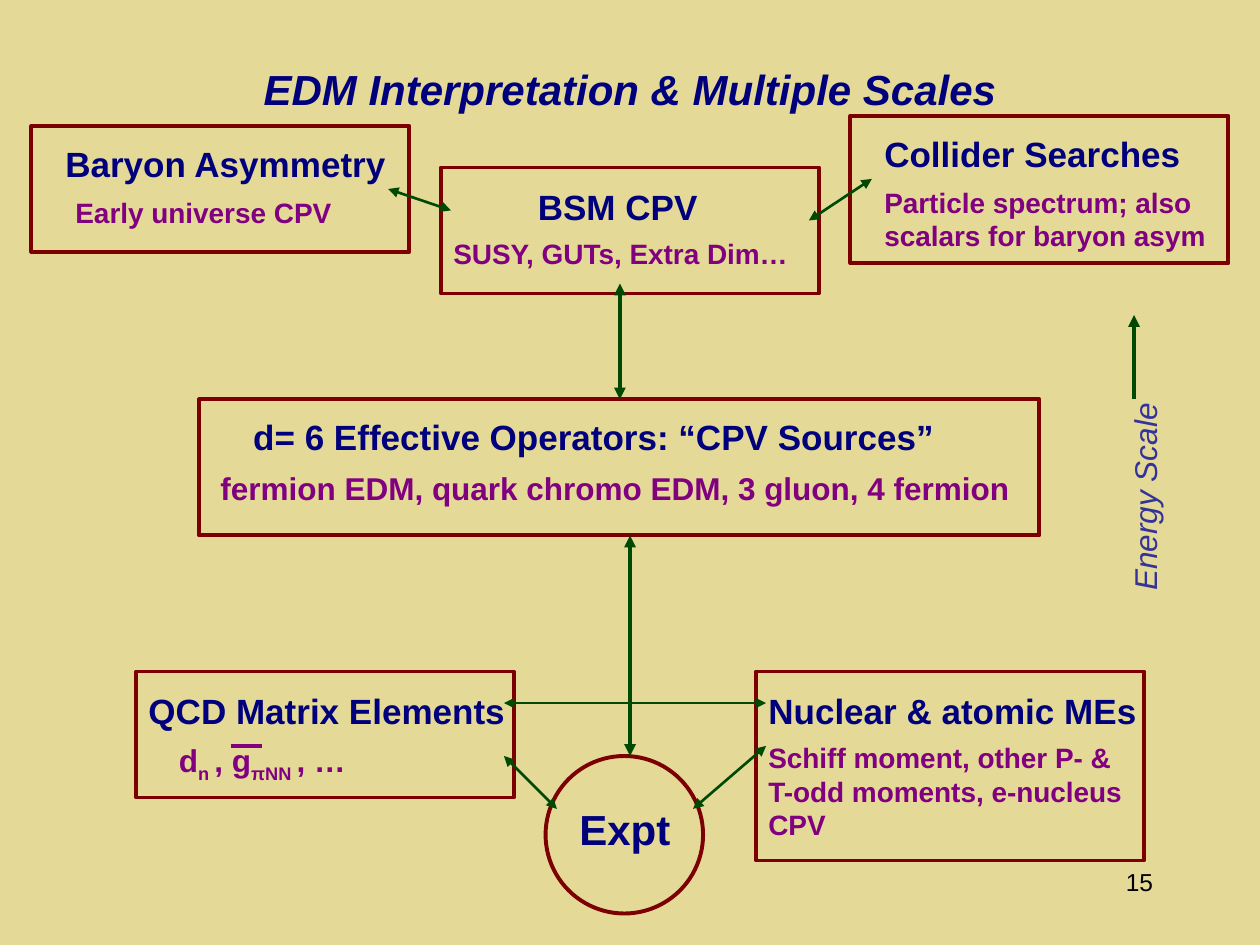
from dataclasses import dataclass

from lxml import etree
from pptx import Presentation
from pptx.dml.color import RGBColor
from pptx.enum import shapes, text
from pptx.oxml import ns
from pptx.util import Inches, Pt


@dataclass(frozen=True)
class Theme:
    font: str = "Arial"
    sand: str = "E4D997"
    navy: str = "00007C"
    purple: str = "800080"
    maroon: str = "7D0000"
    green: str = "004900"
    indigo: str = "333399"
    black: str = "000000"
    title: int = 24
    heading: int = 20
    operator: int = 18
    detail: int = 16
    number: int = 14
    thick: float = 2.25
    thin: float = 1.5


theme = Theme()
deck = Presentation()
deck.slide_width, deck.slide_height = Inches(10), Inches(7.5)
page = deck.slides.add_slide(deck.slide_layouts[6])
page.background.fill.solid()
page.background.fill.fore_color.rgb = RGBColor.from_string(theme.sand)


def add_text(words, at, size, color, bold=True, italic=False, indent=0,
             align=text.PP_ALIGN.LEFT, anchor=text.MSO_ANCHOR.TOP, rotation=0):
    """Add a text box; words is a string or a list of (string, baseline) pairs."""
    box = page.shapes.add_textbox(*map(Inches, at))
    box.rotation = rotation
    frame = box.text_frame
    frame.word_wrap = True
    frame.vertical_anchor = anchor
    frame.margin_left = Inches(0.1 + indent)
    para = frame.paragraphs[0]
    para.alignment = align
    for part, baseline in [(words, 0)] if isinstance(words, str) else words:
        span = para.add_run()
        span.text = part
        span.font.name, span.font.size = theme.font, Pt(size)
        span.font.bold, span.font.italic = bold, italic
        span.font.color.rgb = RGBColor.from_string(color)
        if baseline:
            span._r.get_or_add_rPr().set("baseline", str(baseline * 1000))


def add_line(start, end, width, color=theme.green, heads=()):
    """Add a straight line with arrowheads at the named ends."""
    line = page.shapes.add_connector(
        shapes.MSO_CONNECTOR.STRAIGHT, *map(Inches, (*start, *end)))
    line.line.width = Pt(width)
    line.line.color.rgb = RGBColor.from_string(color)
    outline = line.line._get_or_add_ln()
    for head in heads:
        etree.SubElement(outline, ns.qn(f"a:{head}"), type="triangle")
    etree.SubElement(line._element.spPr, ns.qn("a:effectLst"))


# Title and page number
add_text("EDM Interpretation & Multiple Scales", (0.75, 0.33, 8.5, 0.75),
         theme.title, theme.navy, italic=True,
         align=text.PP_ALIGN.CENTER, anchor=text.MSO_ANCHOR.MIDDLE)
add_text("15", (7.17, 6.83, 2.08, 0.5), theme.number, theme.black, bold=False,
         align=text.PP_ALIGN.RIGHT)

# Frames of the physics topics and the experiment
rectangle, oval = shapes.MSO_SHAPE.RECTANGLE, shapes.MSO_SHAPE.OVAL
for kind, at in [
    (rectangle, (0.25, 1, 3, 1)),
    (rectangle, (3.5, 1.33, 3, 1)),
    (rectangle, (6.75, 0.92, 3, 1.17)),
    (rectangle, (1.58, 3.17, 6.67, 1.08)),
    (rectangle, (1.08, 5.33, 3, 1)),
    (rectangle, (6, 5.33, 3.08, 1.5)),
    (oval, (4.33, 6, 1.25, 1.25)),
]:
    frame_shape = page.shapes.add_shape(kind, *map(Inches, at))
    frame_shape.shadow.inherit = False
    frame_shape.fill.background()
    frame_shape.line.color.rgb = RGBColor.from_string(theme.maroon)
    frame_shape.line.width = Pt(theme.thick)

# Headings
for words, at, indent in [
    ("Baryon Asymmetry", (0.42, 1.08, 2.75, 0.43), 0),
    ("BSM CPV", (4.17, 1.42, 1.67, 0.43), 0),
    ("Collider Searches", (6.92, 1, 2.67, 0.43), 0),
    ("d= 6 Effective Operators: “CPV Sources”", (1.83, 3.25, 6.08, 0.43), 0.08),
    ("QCD Matrix Elements", (1.08, 5.42, 3.25, 0.43), 0),
    ("Nuclear & atomic MEs", (6, 5.42, 3.17, 0.43), 0),
]:
    add_text(words, at, theme.heading, theme.navy, indent=indent)
add_text("Expt", (4.5, 6.33, 1.08, 0.5), theme.title, theme.navy)

# Details under the headings
for words, at in [
    ("Early universe CPV", (0.5, 1.5, 2.42, 0.37)),
    ("SUSY, GUTs, Extra Dim…", (3.5, 1.83, 3, 0.37)),
    ("Particle spectrum; also scalars for baryon asym", (6.92, 1.42, 2.83, 0.64)),
    ("Schiff moment, other P- & T-odd moments, e-nucleus CPV",
     (6, 5.83, 3.17, 0.9)),
]:
    add_text(words, at, theme.detail, theme.purple)

# Operators and couplings, with a bar over the g
couplings = [("d", 0), ("n ", -25), (", g", 0), ("πNN ", -25), (", …", 0)]
for words, at in [
    ("fermion EDM, quark chromo EDM, 3 gluon, 4 fermion", (1.58, 3.67, 6.67, 0.4)),
    (couplings, (1.25, 5.83, 1.92, 0.4)),
]:
    add_text(words, at, theme.operator, theme.purple, indent=0.07)
add_line((1.83, 5.92), (2.08, 5.92), theme.thick, color=theme.purple)

# Two-way links between the topics
for start, end, width in [
    ((3.08, 1.5), (3.58, 1.67), theme.thin),
    ((6.92, 1.42), (6.42, 1.75), theme.thin),
    ((4.92, 2.25), (4.92, 3.17), theme.thick),
    ((5, 4.25), (5, 6), theme.thick),
    ((6.08, 5.58), (4, 5.58), theme.thin),
    ((4, 6), (4.42, 6.42), theme.thin),
    ((6.08, 5.92), (5.5, 6.42), theme.thin),
]:
    add_line(start, end, width, heads=("headEnd", "tailEnd"))

# Energy scale axis
add_text("Energy Scale", (8.17, 3.67, 1.83, 0.4), theme.operator, theme.indigo,
         bold=False, italic=True, rotation=270)
add_line((9, 3.17), (9, 2.5), theme.thick, heads=("tailEnd",))

deck.save("out.pptx")
